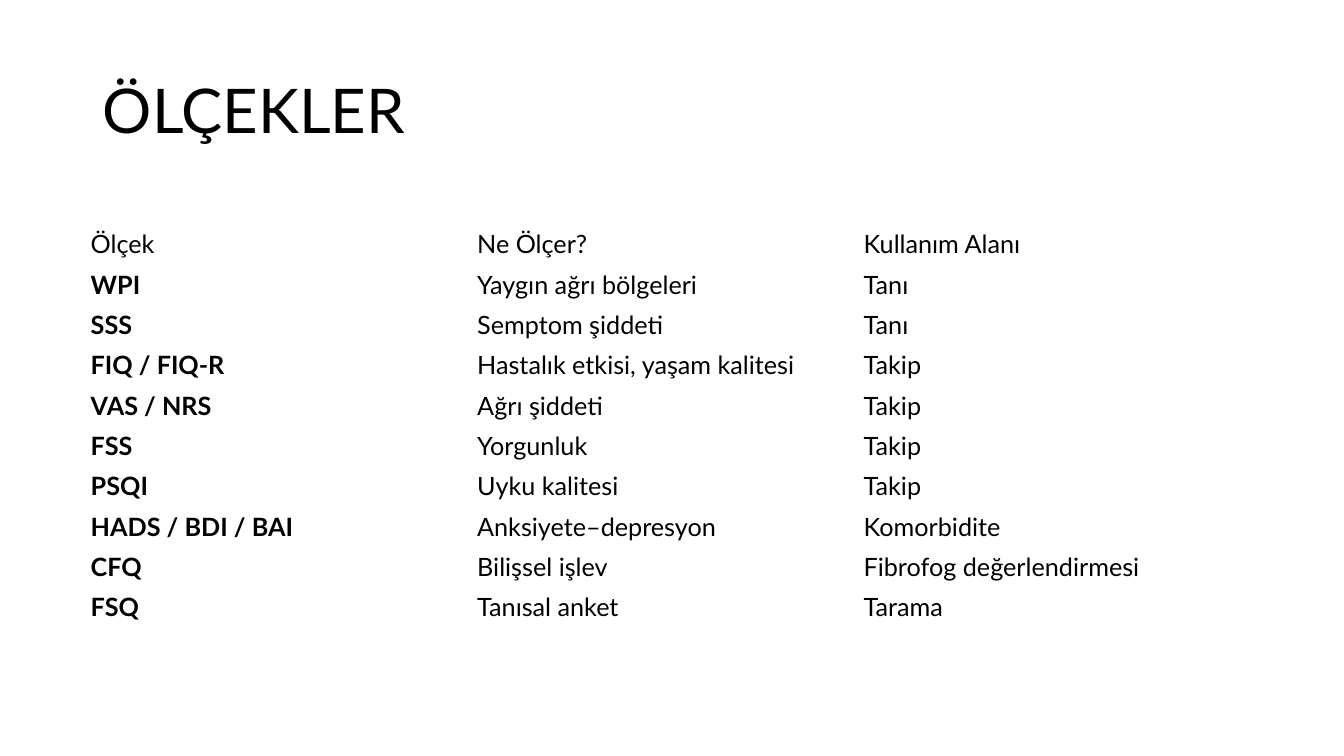
from pptx import Presentation
from pptx.dml.color import RGBColor
from pptx.enum.text import MSO_ANCHOR, PP_ALIGN
from pptx.util import Inches, Pt

COLORS = {"text": "000000"}
FONT = "Lato"
TITLE_ONLY_LAYOUT = 5

HEADERS = ("Ölçek", "Ne Ölçer?", "Kullanım Alanı")
SCALES = (
    ("WPI", "Yaygın ağrı bölgeleri", "Tanı"),
    ("SSS", "Semptom şiddeti", "Tanı"),
    ("FIQ / FIQ-R", "Hastalık etkisi, yaşam kalitesi", "Takip"),
    ("VAS / NRS", "Ağrı şiddeti", "Takip"),
    ("FSS", "Yorgunluk", "Takip"),
    ("PSQI", "Uyku kalitesi", "Takip"),
    ("HADS / BDI / BAI", "Anksiyete–depresyon", "Komorbidite"),
    ("CFQ", "Bilişsel işlev", "Fibrofog değerlendirmesi"),
    ("FSQ", "Tanısal anket", "Tarama"),
)


def set_attributes(target, values):
    for name, value in values.items():
        setattr(target, name, value)


def write_text(frame, text, size, bold=False):
    para = frame.paragraphs[0]
    para.alignment = PP_ALIGN.LEFT
    span = para.add_run()
    span.text = text
    set_attributes(span.font, {"name": FONT, "size": Pt(size), "bold": bold})
    span.font.color.rgb = RGBColor.from_string(COLORS["text"])
    return para


def add_title(page, text):
    title = page.shapes.title
    set_attributes(title, {"left": Inches(0.92), "top": Inches(0.4),
                           "width": Inches(11.5), "height": Inches(1.45)})
    title.text_frame.vertical_anchor = MSO_ANCHOR.MIDDLE
    para = write_text(title.text_frame, text, 44)
    para.line_spacing = 0.9


def add_scale_table(page, rows):
    frame = page.shapes.add_table(len(rows), len(HEADERS), Inches(0.8), Inches(2.22),
                                  Inches(11.5), Inches(0.4) * len(rows))
    table = frame.table
    set_attributes(table, {"first_row": False, "horz_banding": False})
    for row_index, row in enumerate(rows):
        for column_index, text in enumerate(row):
            cell = table.cell(row_index, column_index)
            cell.fill.background()
            cell.vertical_anchor = MSO_ANCHOR.MIDDLE
            # Scale names are bold; the header row is not
            is_scale_name = row_index > 0 and column_index == 0
            write_text(cell.text_frame, text, 18, bold=is_scale_name)


def main():
    deck = Presentation()
    set_attributes(deck, {"slide_width": Inches(13.33), "slide_height": Inches(7.5)})
    page = deck.slides.add_slide(deck.slide_layouts[TITLE_ONLY_LAYOUT])

    # Heading
    add_title(page, "ÖLÇEKLER")

    # Scales, what they measure and where they are used
    add_scale_table(page, (HEADERS, *SCALES))

    deck.save("out.pptx")


if __name__ == "__main__":
    main()
